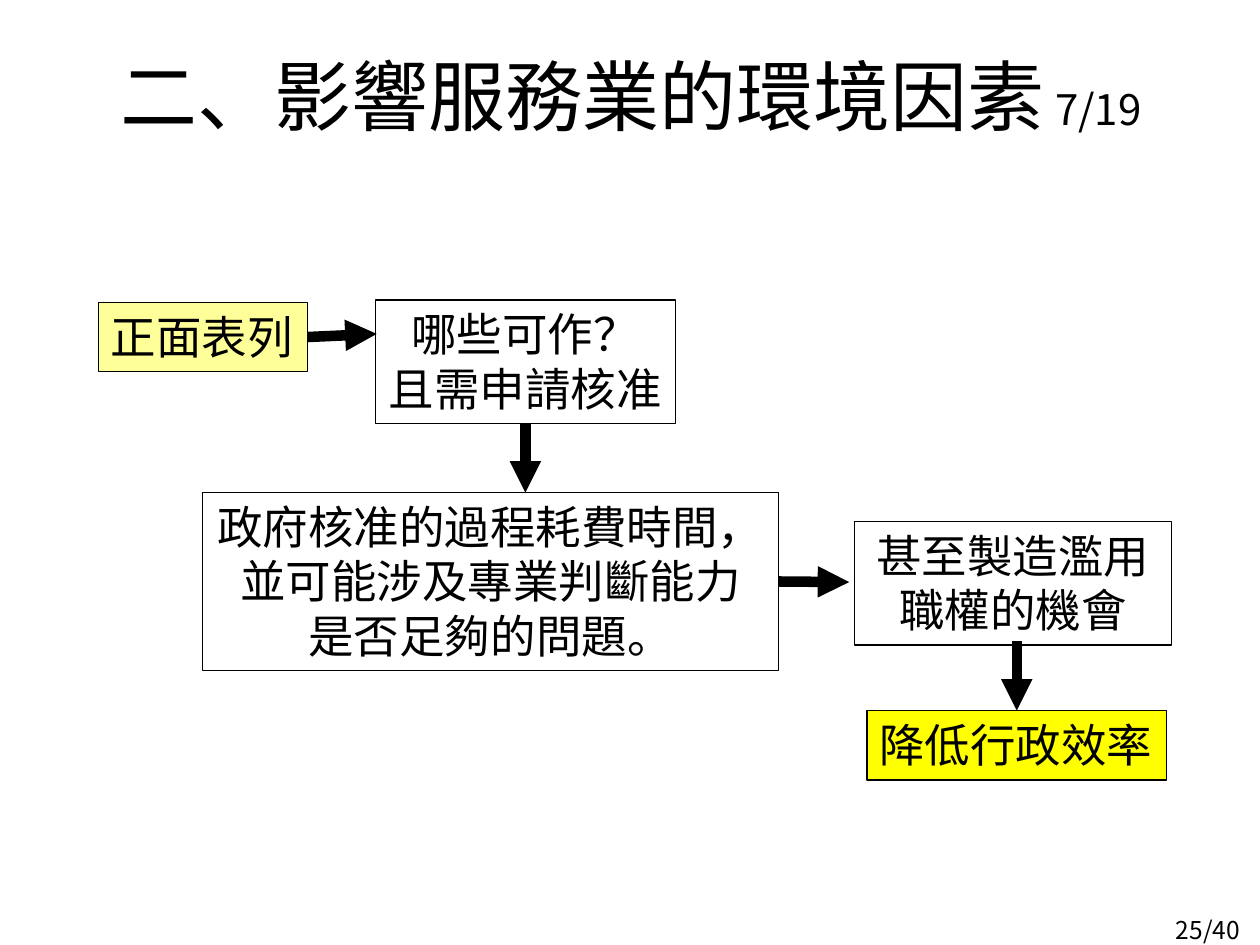
from lxml import etree
from pptx import Presentation
from pptx.dml.color import RGBColor
from pptx.enum.shapes import MSO_CONNECTOR, MSO_SHAPE
from pptx.enum.text import MSO_ANCHOR, MSO_AUTO_SIZE, PP_ALIGN
from pptx.oxml.ns import qn
from pptx.util import Inches, Pt

CENTER, LEFT, RIGHT = PP_ALIGN.CENTER, PP_ALIGN.LEFT, PP_ALIGN.RIGHT
TOP, MIDDLE = MSO_ANCHOR.TOP, MSO_ANCHOR.MIDDLE
GROW = MSO_AUTO_SIZE.SHAPE_TO_FIT_TEXT
RECTANGLE = MSO_SHAPE.RECTANGLE
STRAIGHT = MSO_CONNECTOR.STRAIGHT
SITE_TOP, SITE_BOTTOM, SITE_RIGHT = 0, 2, 3


def color(hex_value):
    return RGBColor.from_string(hex_value)


class FlowSlide:
    """Holds the style and the slide being drawn."""

    ink = "000000"
    heading_font = "Noto Sans CJK TC"
    box_font = "Arial"
    box_size = 26

    def __init__(self, presentation):
        self.slide = presentation.slides.add_slide(presentation.slide_layouts[6])

    def add_run(self, paragraph, text, size, font):
        run = paragraph.add_run()
        run.text = text
        run.font.size = Pt(size)
        run.font.name = font
        run.font.color.rgb = color(self.ink)
        east_asian = etree.Element(qn("a:ea"), typeface=self.heading_font)
        run.font._element.find(qn("a:latin")).addnext(east_asian)

    def text(self, area, runs, align, anchor=TOP):
        """Add one line of (text, size) runs."""
        shape = self.slide.shapes.add_textbox(*map(Inches, area))
        frame = shape.text_frame
        frame.word_wrap = True
        frame.vertical_anchor = anchor
        paragraph = frame.paragraphs[0]
        paragraph.alignment = align
        for text, size in runs:
            self.add_run(paragraph, text, size, self.heading_font)

    def box(self, area, lines, fill=None, align=CENTER, wrap=False):
        shape = self.slide.shapes.add_shape(RECTANGLE, *map(Inches, area))
        shape.shadow.inherit = False
        if fill:
            shape.fill.solid()
            shape.fill.fore_color.rgb = color(fill)
        else:
            shape.fill.background()
        shape.line.color.rgb = color(self.ink)
        shape.line.width = Pt(0.75)
        frame = shape.text_frame
        frame.word_wrap = wrap
        frame.auto_size = GROW
        frame.vertical_anchor = TOP
        for index, line in enumerate(lines):
            paragraph = frame.add_paragraph() if index else frame.paragraphs[0]
            paragraph.alignment = align
            self.add_run(paragraph, line, self.box_size, self.box_font)
        return shape

    def arrow(self, start, end, begin_at=None, end_at=None):
        """Add an arrow; begin_at and end_at are (shape, site) pairs."""
        connector = self.slide.shapes.add_connector(
            STRAIGHT, *map(Inches, (*start, *end)))
        if begin_at:
            connector.begin_connect(*begin_at)
        if end_at:
            connector.end_connect(*end_at)
        connector.line.color.rgb = color(self.ink)
        connector.line.width = Pt(6)
        etree.SubElement(connector.line._get_or_add_ln(), qn("a:tailEnd"), type="triangle")
        etree.SubElement(connector._element.spPr, qn("a:effectLst"))


def main():
    presentation = Presentation()
    presentation.slide_width = Inches(10)
    presentation.slide_height = Inches(7.5)
    flow = FlowSlide(presentation)

    flow.text((9.1, 7.21, 0.84, 0.32), [("25/40", 14)], RIGHT)
    flow.text((0.51, 0.13, 9, 1.25),
              [("二、影響服務業的環境因素", 44), (" 7/19", 24)], CENTER, MIDDLE)

    positive_list = flow.box((0.78, 2.4, 1.66, 0.55), ["正面表列"], "FFFF99", LEFT)
    approval = flow.box((2.98, 2.38, 2.38, 0.98), ["哪些可作？", "且需申請核准"])
    flow.box((6.78, 4.14, 2.52, 0.98), ["甚至製造濫用職權的機會"], wrap=True)
    efficiency = flow.box((6.88, 5.64, 2.38, 0.55), ["降低行政效率"], "FFFF00", LEFT)
    process = flow.box(
        (1.61, 3.91, 4.57, 1.41),
        ["政府核准的過程耗費時間，", "並可能涉及專業判斷能力", "是否足夠的問題。"],
        wrap=True)

    flow.arrow((2.44, 2.66), (2.99, 2.65), begin_at=(positive_list, SITE_RIGHT))
    flow.arrow((4.17, 3.36), (4.17, 3.91), begin_at=(approval, SITE_BOTTOM))
    flow.arrow((8.07, 5.09), (8.07, 5.64), end_at=(efficiency, SITE_TOP))
    flow.arrow((6.18, 4.63), (6.74, 4.62), begin_at=(process, SITE_RIGHT))

    presentation.save("out.pptx")


if __name__ == "__main__":
    main()
